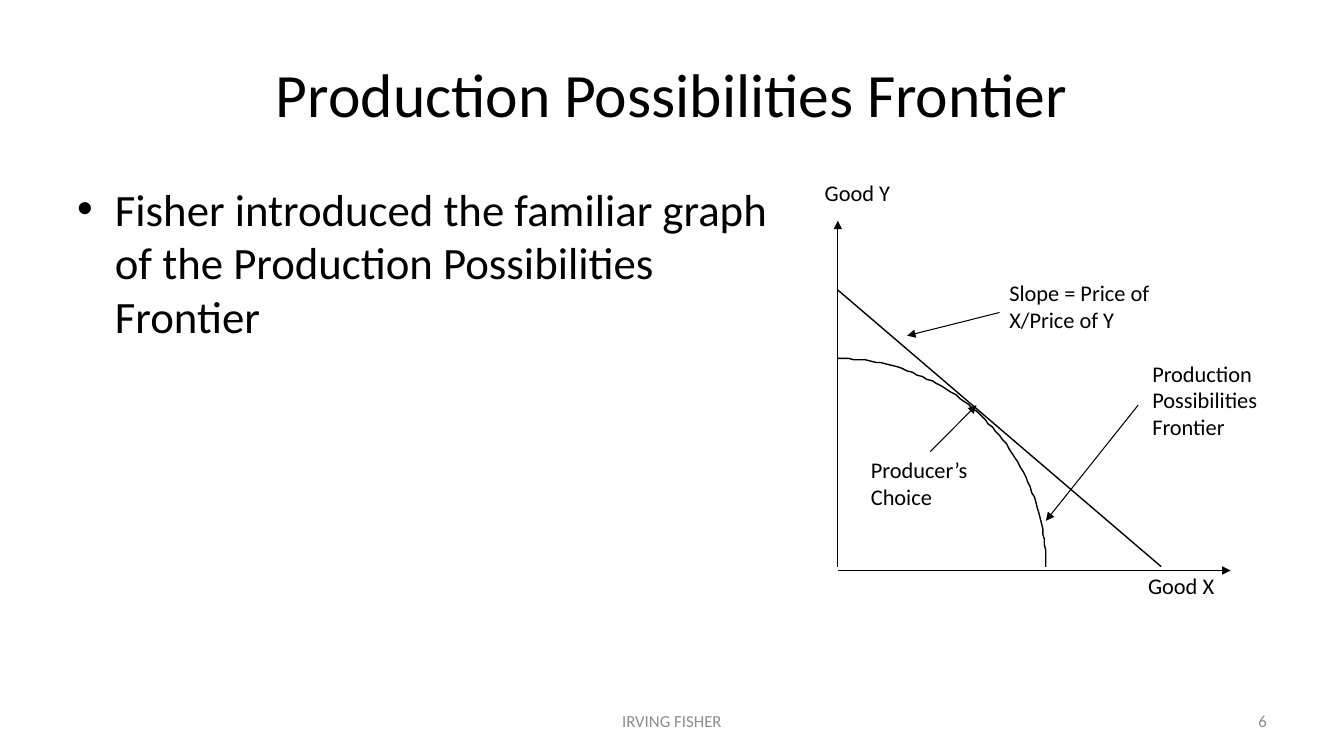
from math import cos, pi, sin

from lxml import etree
from pptx import Presentation
from pptx.dml.color import RGBColor
from pptx.enum.shapes import MSO_CONNECTOR
from pptx.enum.text import MSO_ANCHOR, PP_ALIGN
from pptx.oxml.ns import qn
from pptx.util import Pt

STRAIGHT = MSO_CONNECTOR.STRAIGHT
TOP, MIDDLE = MSO_ANCHOR.TOP, MSO_ANCHOR.MIDDLE
LEFT, CENTER, RIGHT = PP_ALIGN.LEFT, PP_ALIGN.CENTER, PP_ALIGN.RIGHT
BLACK, GRAY = "000000", "8C8C8C"
ORIGIN_X, BASE_Y, RADIUS = 598.5, 404.8, 148.6


def color(value):
    """Turn a hex string into a colour."""
    return RGBColor.from_string(value)


class SlideBuilder:
    """Hold the style and the current slide."""

    font = "Calibri"

    def __init__(self, slide):
        """Start drawing on a slide."""
        self.slide = slide

    def text(self, text, left, top, width, height, size=16, fill=BLACK,
             align=LEFT, anchor=TOP, after=0):
        """Add a text box and return its paragraph."""
        shape = self.slide.shapes.add_textbox(Pt(left), Pt(top), Pt(width), Pt(height))
        frame = shape.text_frame
        frame.word_wrap = True
        frame.vertical_anchor = anchor
        frame.text = text
        paragraph = frame.paragraphs[0]
        paragraph.alignment = align
        paragraph.space_after = Pt(after)
        for run in paragraph.runs:
            run.font.name = self.font
            run.font.size = Pt(size)
            run.font.color.rgb = color(fill)
        return paragraph

    def bullet(self, text, left, top, width, height, size, indent):
        """Add a bulleted paragraph with a hanging indent."""
        paragraph = self.text(text, left, top, width, height, size)
        paragraph.space_before = Pt(size * 0.2)
        properties = paragraph._p.get_or_add_pPr()
        properties.set("marL", str(Pt(indent)))
        properties.set("indent", str(-Pt(indent)))
        etree.SubElement(properties, qn("a:buFont"), typeface="Arial")
        etree.SubElement(properties, qn("a:buChar"), char="•")

    def line(self, start, end, width=0.75, arrow=True):
        """Add a straight line, with an arrowhead at its end if wanted."""
        points = [Pt(value) for value in (*start, *end)]
        connector = self.slide.shapes.add_connector(STRAIGHT, *points)
        connector.line.color.rgb = color(BLACK)
        connector.line.width = Pt(width)
        if arrow:
            etree.SubElement(connector.line._get_or_add_ln(), qn("a:tailEnd"), type="triangle")
        etree.SubElement(connector._element.spPr, qn("a:effectLst"))

    def quarter_circle(self, center_x, center_y, radius, steps=60):
        """Add an open arc from the top of a circle to its right side."""
        angles = [pi / 2 * step / steps for step in range(steps + 1)]
        points = [(center_x + radius * sin(angle), center_y - radius * cos(angle))
                  for angle in angles]
        builder = self.slide.shapes.build_freeform(*points[0], scale=Pt(1))
        builder.add_line_segments(points[1:], close=False)
        shape = builder.convert_to_shape()
        shape.shadow.inherit = False
        shape.fill.background()
        shape.line.color.rgb = color(BLACK)
        shape.line.width = Pt(1)


def main():
    """Build the slide and save it."""
    presentation = Presentation()
    presentation.slide_width, presentation.slide_height = Pt(960), Pt(540)
    slide = presentation.slides.add_slide(presentation.slide_layouts[6])
    builder = SlideBuilder(slide)

    builder.text("Production Possibilities Frontier", 48, 21.6, 864, 90, 44,
                 align=CENTER, anchor=MIDDLE)
    builder.bullet("Fisher introduced the familiar graph of the Production Possibilities Frontier",
                   48, 126, 534, 356.4, 32, 27)
    builder.text("IRVING FISHER", 328, 500.5, 304, 28.8, 12, GRAY, CENTER, MIDDLE)
    builder.text("6", 688, 500.5, 224, 28.8, 12, GRAY, RIGHT, MIDDLE)

    builder.line((ORIGIN_X, 407.5), (879, 407.5))
    builder.line((ORIGIN_X, BASE_Y), (ORIGIN_X, 157.7))
    builder.quarter_circle(ORIGIN_X, BASE_Y, RADIUS)
    builder.line((ORIGIN_X, 207.2), (829.5, BASE_Y), width=1, arrow=False)

    for label, left, top, width, height, after in (
        ("Good Y", 582, 124.6, 82.8, 33.1, 10),
        ("Good X", 813, 405.4, 82.8, 33.1, 10),
        ("Production Possibilities Frontier", 816, 253.4, 131.8, 82.8, 10),
        ("Slope = Price of X/Price of Y", 713.9, 196, 131.8, 49.7, 10),
        ("Producer’s Choice", 615, 322.6, 115.2, 66.2, 0),
    ):
        builder.text(label, left, top, width, height, after=after)

    for start, end in (
        ((813, 289.4), (747.1, 372)),
        ((714, 223.2), (648, 239.8)),
        ((664.5, 322.6), (697.5, 289.4)),
    ):
        builder.line(start, end)

    presentation.save("out.pptx")


if __name__ == "__main__":
    main()
